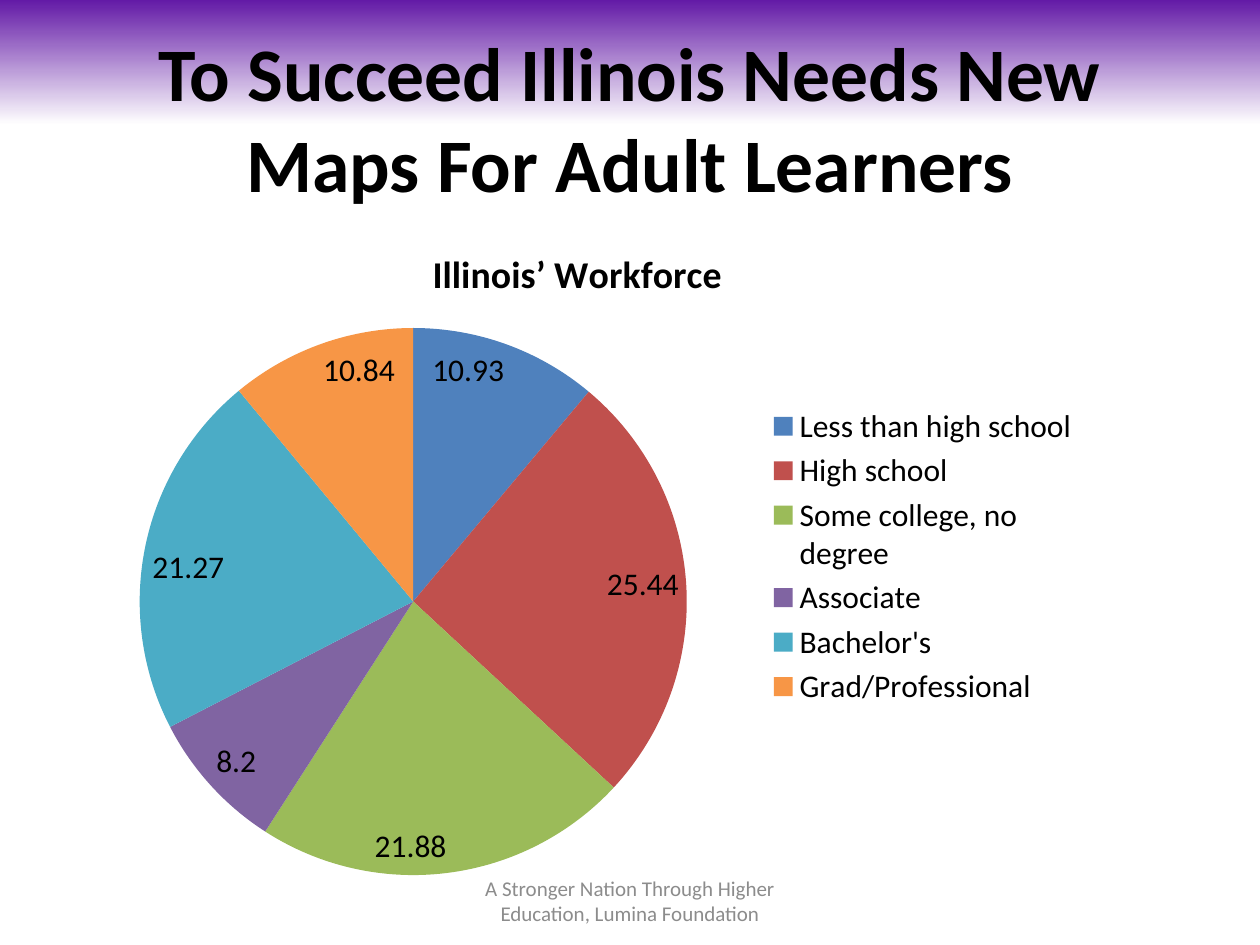
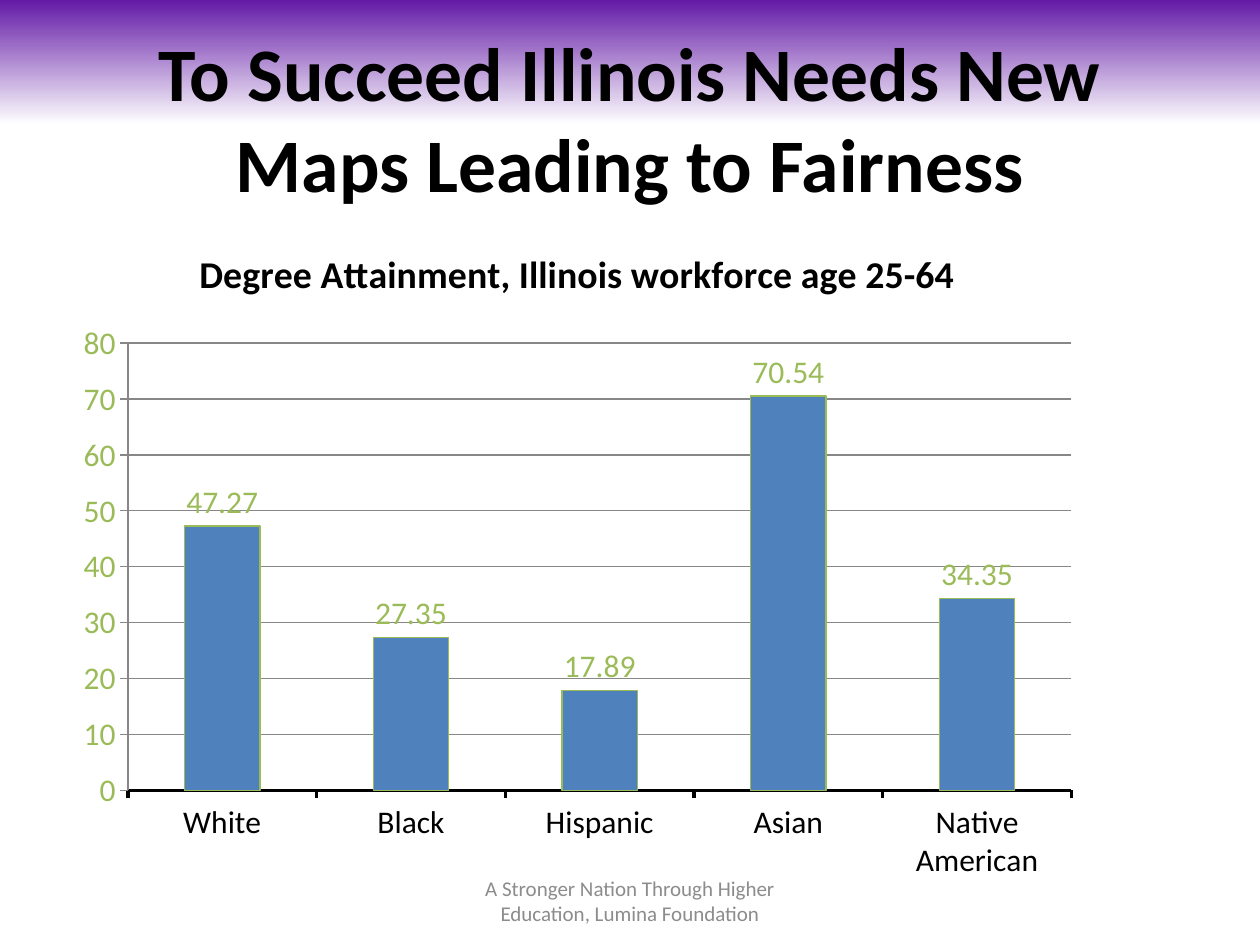
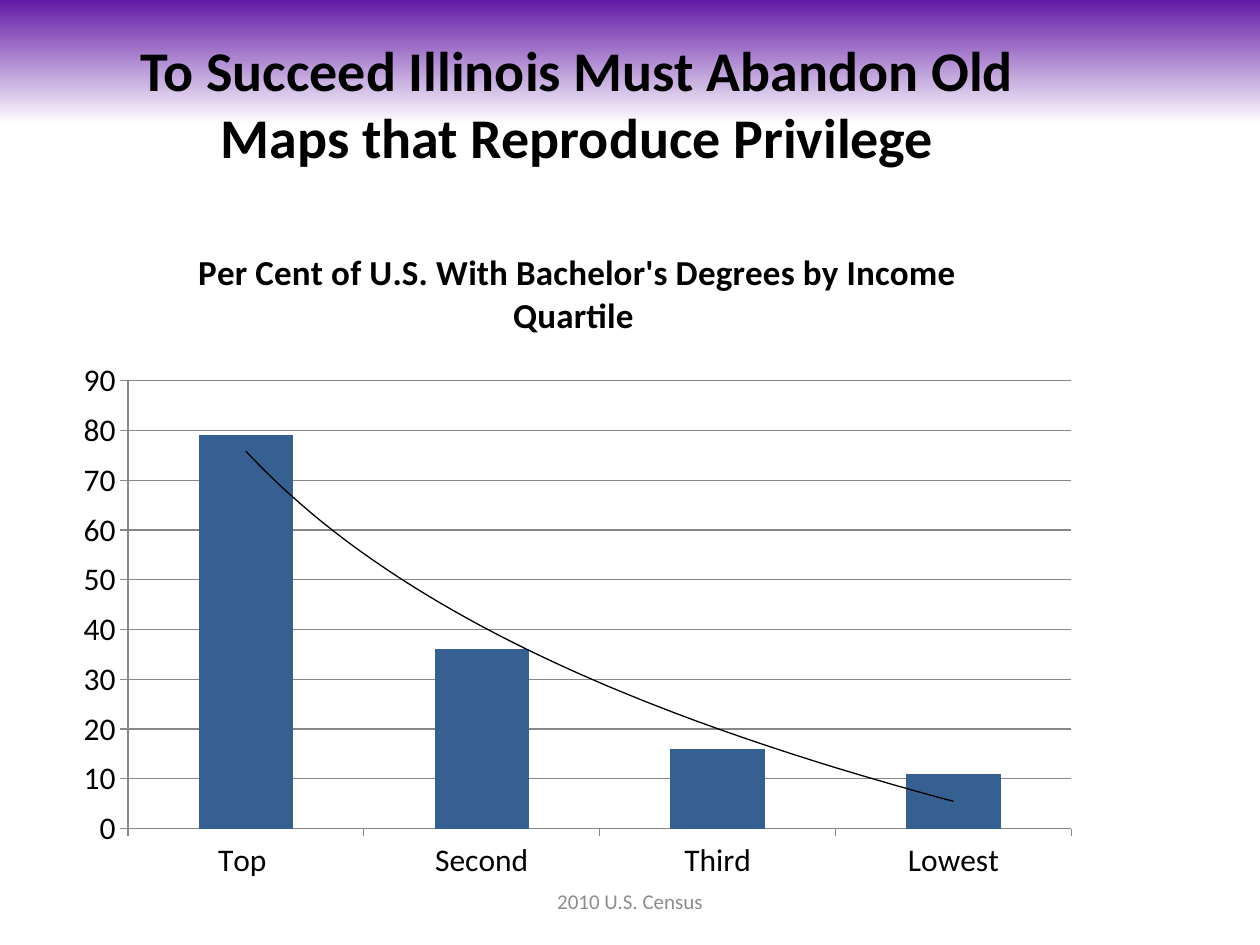
import pptx
import pptx.chart.data
import pptx.dml.color
import pptx.enum.chart
import pptx.enum.shapes
import pptx.enum.text
import pptx.oxml
import pptx.oxml.ns
import pptx.util

Pt = pptx.util.Pt
RGBColor = pptx.dml.color.RGBColor
XL = pptx.enum.chart

FONT = "Calibri"
BLACK = RGBColor(0x00, 0x00, 0x00)
WHITE = RGBColor(0xFF, 0xFF, 0xFF)
PURPLE = RGBColor(0x63, 0x1A, 0xA6)
FOOTER_GREY = RGBColor(0x8C, 0x8C, 0x8C)
AXIS_GREY = RGBColor(0x87, 0x87, 0x87)
BLUE = RGBColor(0x4F, 0x81, 0xBD)
DARK_BLUE = RGBColor(0x37, 0x60, 0x92)
GREEN = RGBColor(0x9B, 0xBB, 0x59)
PIE_COLORS = [
    BLUE,
    RGBColor(0xC0, 0x50, 0x4D),
    GREEN,
    RGBColor(0x80, 0x64, 0xA2),
    RGBColor(0x4B, 0xAC, 0xC6),
    RGBColor(0xF7, 0x96, 0x46),
]

SLIDE_W, SLIDE_H = Pt(720), Pt(540)
TITLE_BOX = (Pt(36), Pt(21.6), Pt(648), Pt(90))
NARROW_TITLE_BOX = (Pt(36), Pt(18), Pt(588), Pt(81))
CHART_BOX = (Pt(36), Pt(126), Pt(588), Pt(384))
FOOTER_BOX = (Pt(246), Pt(500.4), Pt(228), Pt(28.8))
NATION_REPORT = "A Stronger Nation Through Higher Education, Lumina Foundation"


def set_font(font, size, color, bold=False):
    """Apply the deck's typeface with a size, colour and weight."""
    font.name = FONT
    font.size = Pt(size)
    font.color.rgb = color
    font.bold = bold


def set_text(shape, text, size, color, bold=False):
    """Fill a shape with one centred, wrapped paragraph."""
    tf = shape.text_frame
    tf.word_wrap = True
    tf.auto_size = pptx.enum.text.MSO_AUTO_SIZE.NONE
    tf.vertical_anchor = pptx.enum.text.MSO_ANCHOR.MIDDLE
    p = tf.paragraphs[0]
    p.text = text
    p.alignment = pptx.enum.text.PP_ALIGN.CENTER
    set_font(p.font, size, color, bold)


def add_band(s):
    """Add the purple fade along the top edge, behind everything else."""
    band = s.shapes.add_shape(
        pptx.enum.shapes.MSO_SHAPE.RECTANGLE, 0, 0, SLIDE_W, Pt(71.28))
    band.shadow.inherit = False
    band.line.fill.background()
    band.fill.gradient()
    band.fill.gradient_angle = 270
    for stop, color in zip(band.fill.gradient_stops, (PURPLE, WHITE)):
        stop.color.rgb = color
    band.element.getparent().insert(2, band.element)


def add_slide(prs, title, footer, title_box=TITLE_BOX, title_size=43.2):
    """Add a slide with its band, title and source footer."""
    s = prs.slides.add_slide(prs.slide_layouts[5])
    add_band(s)
    sp = s.shapes.title
    sp.left, sp.top, sp.width, sp.height = title_box
    set_text(sp, title, title_size, BLACK, True)
    set_text(s.shapes.add_textbox(*FOOTER_BOX), footer, 12, FOOTER_GREY)
    return s


def add_chart(s, kind, title, values, title_size=21.6, color=BLACK):
    """Add a titled single-series chart from a dict of values."""
    data = pptx.chart.data.CategoryChartData()
    data.categories = list(values)
    data.add_series("Series 1", list(values.values()))
    chart = s.shapes.add_chart(kind, *CHART_BOX, data).chart
    set_font(chart.font, 18, color)
    chart.has_legend = False
    chart.has_title = True
    p = chart.chart_title.text_frame.paragraphs[0]
    p.text = title
    set_font(p.font, title_size, BLACK, True)
    return chart


def show_values(chart, position, color):
    """Label every point of the chart with its value."""
    plot = chart.plots[0]
    plot.has_data_labels = True
    labels = plot.data_labels
    labels.show_value = True
    labels.show_percentage = False
    labels.position = position
    set_font(labels.font, 18, color)


def add_pie(s, title, values):
    """Add a pie chart with a legend on the right."""
    chart = add_chart(s, XL.XL_CHART_TYPE.PIE, title, values)
    for i, color in enumerate(PIE_COLORS):
        fill = chart.plots[0].series[0].points[i].format.fill
        fill.solid()
        fill.fore_color.rgb = color
    show_values(chart, XL.XL_LABEL_POSITION.INSIDE_END, BLACK)
    chart.has_legend = True
    chart.legend.position = XL.XL_LEGEND_POSITION.RIGHT
    chart.legend.include_in_layout = False
    set_font(chart.legend.font, 18, BLACK)


def add_columns(s, title, values, top, fill_color, **style):
    """Add a column chart whose value axis runs from 0 to top in tens."""
    chart = add_chart(
        s, XL.XL_CHART_TYPE.COLUMN_CLUSTERED, title, values, **style)
    plot = chart.plots[0]
    plot.gap_width = 150
    plot.vary_by_categories = False
    fill = plot.series[0].format.fill
    fill.solid()
    fill.fore_color.rgb = fill_color
    value_axis = chart.value_axis
    value_axis.minimum_scale = 0
    value_axis.maximum_scale = top
    value_axis.major_unit = 10
    value_axis.has_major_gridlines = True
    for axis in (value_axis, chart.category_axis):
        axis.major_tick_mark = XL.XL_TICK_MARK.OUTSIDE
    for part in (value_axis, chart.category_axis, value_axis.major_gridlines):
        part.format.line.color.rgb = AXIS_GREY
        part.format.line.width = Pt(0.75)
    return chart


def add_log_trend(chart):
    """Add a thin black logarithmic trend line to the series."""
    ser = chart.plots[0].series[0]._element
    trend = pptx.oxml.parse_xml(
        f'<c:trendline {pptx.oxml.ns.nsdecls("c", "a")}>'
        '<c:spPr><a:ln w="9525"><a:solidFill><a:srgbClr val="000000"/>'
        '</a:solidFill></a:ln></c:spPr><c:trendlineType val="log"/>'
        '<c:dispRSqr val="0"/><c:dispEq val="0"/></c:trendline>')
    ser.find(pptx.oxml.ns.qn("c:cat")).addprevious(trend)


def add_workforce_slide(prs):
    """Show the workforce by level of education."""
    s = add_slide(prs, "To Succeed Illinois Needs New Maps For Adult Learners",
                  NATION_REPORT)
    add_pie(s, "Illinois’ Workforce", {
        "Less than high school": 10.93,
        "High school": 25.44,
        "Some college, no degree": 21.88,
        "Associate": 8.2,
        "Bachelor's": 21.27,
        "Grad/Professional": 10.84,
    })


def add_fairness_slide(prs):
    """Show degree attainment by group."""
    s = add_slide(prs, "To Succeed Illinois Needs New Maps Leading to Fairness",
                  NATION_REPORT)
    chart = add_columns(s, "Degree Attainment, Illinois workforce age 25-64", {
        "White": 47.27,
        "Black": 27.35,
        "Hispanic": 17.89,
        "Asian": 70.54,
        "Native American": 34.35,
    }, 80, BLUE, color=GREEN)
    show_values(chart, XL.XL_LABEL_POSITION.OUTSIDE_END, GREEN)
    bar_line = chart.plots[0].series[0].format.line
    bar_line.color.rgb = GREEN
    bar_line.width = Pt(0.75)
    axis = chart.category_axis
    set_font(axis.tick_labels.font, 18, BLACK)
    axis.format.line.color.rgb = BLACK
    axis.format.line.width = Pt(2)


def add_privilege_slide(prs):
    """Show bachelor's degrees by income quartile."""
    s = add_slide(
        prs, "To Succeed Illinois Must Abandon Old Maps that Reproduce Privilege",
        "2010 U.S. Census", NARROW_TITLE_BOX, 32)
    chart = add_columns(
        s, "Per Cent of U.S. With Bachelor's Degrees by Income Quartile ",
        {"Top ": 79, "Second": 36, "Third": 16, "Lowest": 11},
        90, DARK_BLUE, title_size=20)
    add_log_trend(chart)


def main():
    """Build and save the deck."""
    prs = pptx.Presentation()
    prs.slide_width, prs.slide_height = SLIDE_W, SLIDE_H
    add_workforce_slide(prs)
    add_fairness_slide(prs)
    add_privilege_slide(prs)
    prs.save("out.pptx")


if __name__ == "__main__":
    main()
